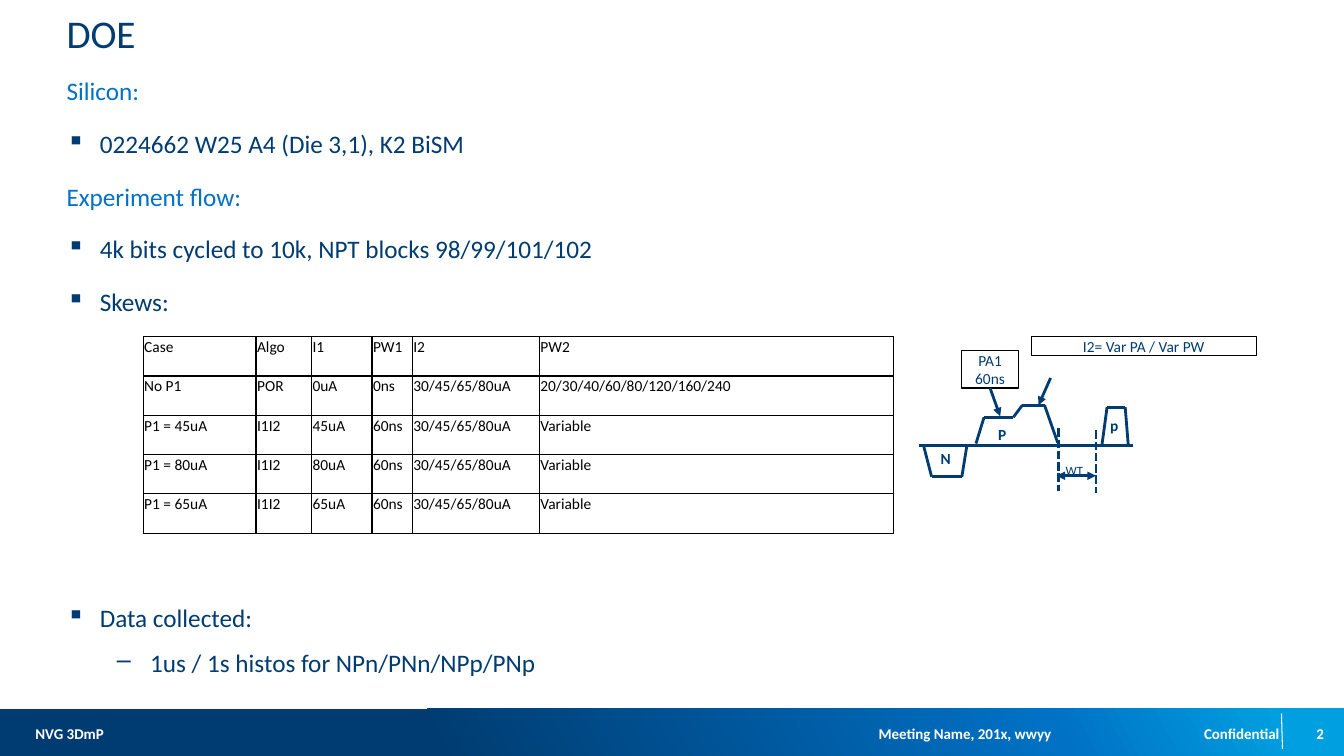
import pptx
import pptx.util
import pptx.dml.color
import pptx.enum.dml
import pptx.enum.shapes
import pptx.enum.text
import pptx.oxml
import copy
import lxml.etree

Inches, Pt = pptx.util.Inches, pptx.util.Pt
RGBColor = pptx.dml.color.RGBColor
ALIGN, ANCHOR = pptx.enum.text.PP_ALIGN, pptx.enum.text.MSO_ANCHOR
RECTANGLE = pptx.enum.shapes.MSO_SHAPE.RECTANGLE
STRAIGHT = pptx.enum.shapes.MSO_CONNECTOR.STRAIGHT
NAVY = RGBColor(0x00, 0x3C, 0x71)
BLUE = RGBColor(0x00, 0x71, 0xC5)
SKY = RGBColor(0x00, 0x9F, 0xDF)
WHITE = RGBColor(0xFF, 0xFF, 0xFF)
BLACK = RGBColor(0, 0, 0)
NAMESPACE = "http://schemas.openxmlformats.org/drawingml/2006/main"

deck = pptx.Presentation()
deck.slide_width, deck.slide_height = Inches(13.33), Inches(7.5)
page = deck.slides.add_slide(deck.slide_layouts[5])


def write(box, lines, size, color, bold=False, align=ALIGN.LEFT, anchor=ANCHOR.TOP, wrap=True):
    frame = box.text_frame
    frame.word_wrap = wrap
    frame.vertical_anchor = anchor
    for side in ("left", "top", "right", "bottom"):
        setattr(frame, f"margin_{side}", 0)
    frame.text = "\n".join(lines)
    for para in frame.paragraphs:
        para.alignment = align
        style = {"name": "Calibri", "size": Pt(size), "bold": bold}
        for name, value in style.items():
            setattr(para.font, name, value)
        para.font.color.rgb = color


def draw_line(start, end, color=NAVY, width=2, dashed=False, ends=()):
    line = page.shapes.add_connector(STRAIGHT, *map(Inches, start + end))
    line.line.color.rgb = color
    line.line.width = Pt(width)
    if dashed:
        line.line.dash_style = pptx.enum.dml.MSO_LINE.SQUARE_DOT
    for tag in ends:
        lxml.etree.SubElement(line.line._get_or_add_ln(), f"{{{NAMESPACE}}}{tag}", type="triangle")
    lxml.etree.SubElement(line._element.spPr, f"{{{NAMESPACE}}}effectLst")
    return line


footer = page.shapes.add_shape(RECTANGLE, *map(Inches, (0, 7.03, 13.33, 0.47)))
footer.shadow.inherit = False
footer.line.fill.background()
footer.fill.gradient()
footer.fill.gradient_angle = 29
stop_list = footer._element.spPr.find(f".//{{{NAMESPACE}}}gsLst")
stop_list.append(copy.deepcopy(stop_list[-1]))
for stop, position, color in zip(footer.fill.gradient_stops, (0.32, 0.78, 0.95), (NAVY, BLUE, SKY)):
    stop.position = position
    stop.color.rgb = color
draw_line((12.71, 7.08), (12.72, 7.43), WHITE, 0.75)
for text, left, width in (
    ("Confidential", 10.69, 2),
    ("2", 12.83, 0.3),
    ("NVG 3DmP", 0.08, 0.95),
    ("Meeting Name, 201x, wwyy", 6.86, 3.57),
):
    box = page.shapes.add_textbox(*map(Inches, (left, 7.08, width, 0.4)))
    write(box, [text], 10.7, WHITE, True, ALIGN.RIGHT, ANCHOR.MIDDLE)

title = page.shapes.title
title.left, title.top, title.width, title.height = map(Inches, (0.66, 0.09, 12, 0.45))
write(title, ["DOE"], 28, NAVY)

outline = [
    ("Silicon:", None, 0, 0),
    ("0224662 W25 A4 (Die 3,1), K2 BiSM", "▪", 0.33, 16),
    ("Experiment flow:", None, 0, 16),
    ("4k bits cycled to 10k, NPT blocks 98/99/101/102", "▪", 0.33, 16),
    ("Skews:", "▪", 0.33, 16),
    ("Data collected:", "▪", 0.33, 204),
    ("1us / 1s histos for NPn/PNn/NPp/PNp", "–", 0.83, 10.7),
]
body = page.shapes.add_textbox(*map(Inches, (0.66, 0.75, 12.05, 6.05)))
write(body, [row[0] for row in outline], 18, NAVY)
for para, (text, bullet, indent, gap) in zip(body.text_frame.paragraphs, outline):
    para.space_before = Pt(gap)
    if bullet:
        properties = para._p.get_or_add_pPr()
        properties.set("marL", str(Inches(indent)))
        properties.set("indent", str(Inches(-0.33)))
        mark = pptx.oxml.parse_xml(f'<a:buChar xmlns:a="{NAMESPACE}" char="{bullet}"/>')
        properties.find(f"{{{NAMESPACE}}}defRPr").addprevious(mark)
    else:
        para.font.color.rgb = BLUE

currents = "30/45/65/80uA"
cases = [
    ["Case", "Algo", "I1", "PW1", "I2", "PW2"],
    ["No P1", "POR", "0uA", "0ns", currents, "20/30/40/60/80/120/160/240"],
]
for level in ("45uA", "80uA", "65uA"):
    cases.append([f"P1 = {level}", "I1I2", level, "60ns", currents, "Variable"])
table_frame = page.shapes.add_table(5, 6, *map(Inches, (1.42, 3.34, 7.44, 1.94)))
table = table_frame.table
table.first_row = table.horz_banding = False
for column, width in zip(table.columns, (1.12, 0.55, 0.6, 0.4, 1.26, 3.51)):
    column.width = Inches(width)
for row, texts in zip(table.rows, cases):
    row.height = Inches(0.39)
    for cell, text in zip(row.cells, texts):
        write(cell, [text], 11, BLACK, anchor=ANCHOR.MIDDLE, wrap=None)
        cell.margin_left = cell.margin_top = cell.margin_right = Inches(0.01)
        properties = cell._tc.get_or_add_tcPr()
        for edge in ("lnL", "lnR", "lnT", "lnB"):
            properties.append(pptx.oxml.parse_xml(
                f'<a:{edge} xmlns:a="{NAMESPACE}" w="12700"><a:solidFill>'
                f'<a:srgbClr val="{BLACK}"/></a:solidFill></a:{edge}>'))
        cell.fill.background()

draw_line((9.11, 4.42), (11.24, 4.42))
draw_line((10.48, 4.72), (10.87, 4.72), ends=("headEnd", "tailEnd"))
for left, top in ((10.87, 4.27), (10.5, 4.25)):
    draw_line((left, top), (left, top + 0.62), dashed=True)
pulses = [
    [(9.16, 4.42), (9.24, 4.73), (9.54, 4.73), (9.59, 4.42)],
    [(9.68, 4.4), (9.76, 4.14), (10.05, 4.14), (10.14, 4.02), (10.36, 4.02), (10.49, 4.39)],
    [(10.93, 4.41), (10.98, 4.04), (11.16, 4.04), (11.19, 4.41)],
]
for corners in pulses:
    for start, end in zip(corners, corners[1:]):
        draw_line(start, end)
for text, left, top, width, height, size in (
    ("WT", 10.57, 4.59, 0.2, 0.15, 9),
    ("N", 9.33, 4.46, 0.11, 0.19, 11),
    ("P", 9.9, 4.22, 0.1, 0.19, 11),
    ("p", 11.01, 4.13, 0.1, 0.19, 11),
):
    box = page.shapes.add_textbox(*map(Inches, (left, top, width, height)))
    write(box, [text], size, NAVY, bold=text != "WT", wrap=False)

callouts = []
for lines, bounds in (
    (["PA1", "60ns"], (9.54, 3.48, 0.56, 0.37)),
    (["I2= Var PA / Var PW"], (10.23, 3.34, 2.23, 0.19)),
):
    box = page.shapes.add_shape(RECTANGLE, *map(Inches, bounds))
    box.shadow.inherit = False
    box.fill.background()
    box.line.color.rgb = BLACK
    box.line.width = Pt(0.75)
    write(box, lines, 11, NAVY, align=ALIGN.CENTER)
    callouts.append(box)
first_arrow = draw_line((9.82, 3.85), (9.92, 4.13), ends=("tailEnd",))
first_arrow.begin_connect(callouts[0], 2)
draw_line((10.42, 3.75), (10.3, 4.02), ends=("tailEnd",))

deck.save("out.pptx")
